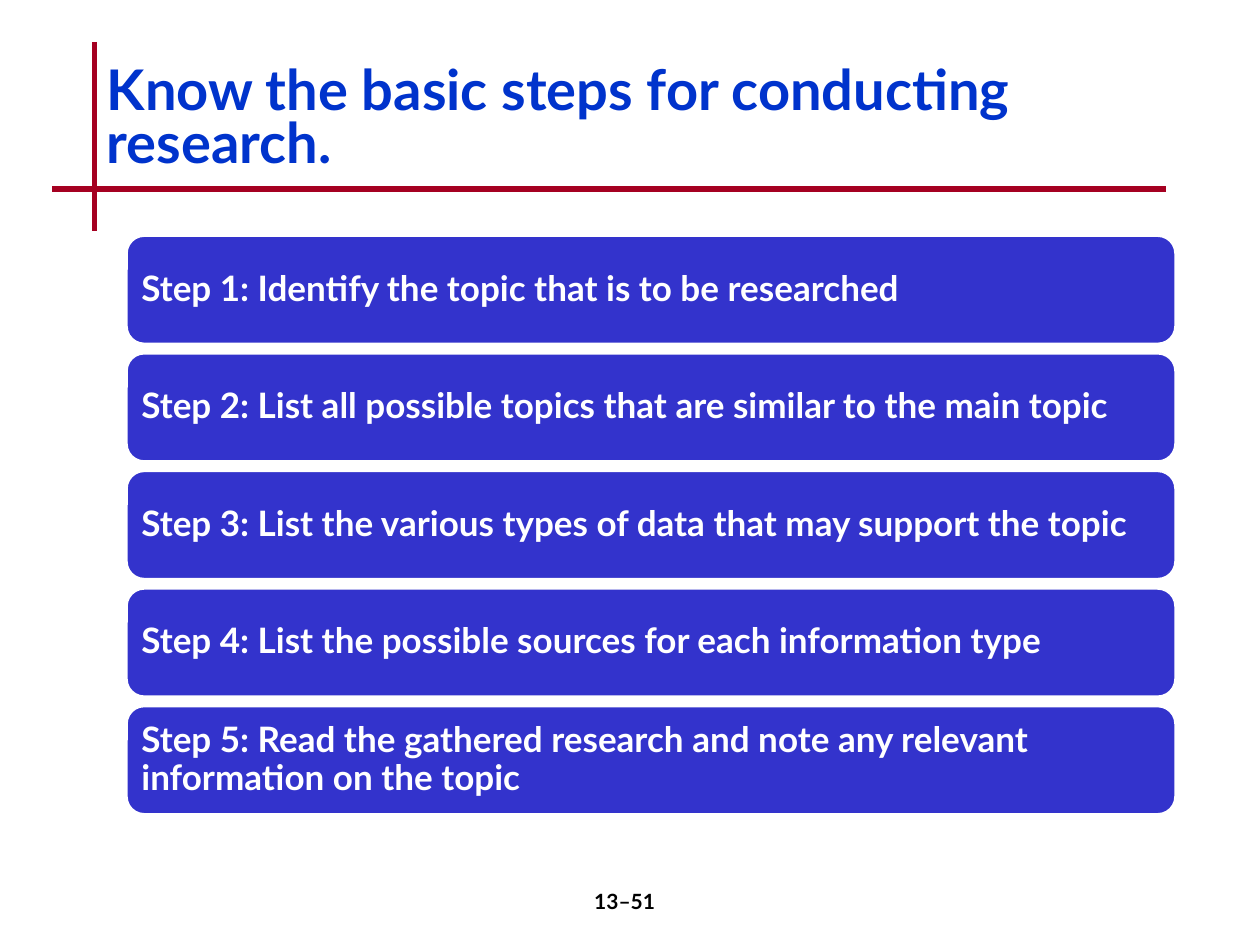
"""Build the slide on the basic steps for conducting research."""
from lxml import etree
from pptx import Presentation
from pptx.dml.color import RGBColor
from pptx.enum.shapes import MSO_CONNECTOR, MSO_SHAPE
from pptx.enum.text import MSO_ANCHOR, PP_ALIGN
from pptx.oxml.ns import qn
from pptx.util import Inches, Pt

LINE = MSO_CONNECTOR.STRAIGHT
ROUND = MSO_SHAPE.ROUNDED_RECTANGLE
MIDDLE, TOP = MSO_ANCHOR.MIDDLE, MSO_ANCHOR.TOP
LEFT, CENTER = PP_ALIGN.LEFT, PP_ALIGN.CENTER
RED = RGBColor(0xA5, 0x00, 0x21)
BLUE = RGBColor(0x00, 0x33, 0xCC)
INDIGO = RGBColor(0x33, 0x33, 0xCC)
WHITE = RGBColor(0xFF, 0xFF, 0xFF)
BLACK = RGBColor(0x00, 0x00, 0x00)
STEPS = [
    "Identify the topic that is to be researched",
    "List all possible topics that are similar to the main topic",
    "List the various types of data that may support the topic",
    "List the possible sources for each information type",
    "Read the gathered research and note any relevant information on the topic",
]

deck = Presentation()
deck.slide_width, deck.slide_height = Inches(10), Inches(7.5)
slide = deck.slides.add_slide(deck.slide_layouts[6])
shapes = slide.shapes
UNIT = deck.slide_width / 120


def grid(*cells):
    return [round(cell * UNIT) for cell in cells]


def write(shape, text, size, color, align=LEFT, anchor=MIDDLE, spacing=1.0):
    frame = shape.text_frame
    frame.word_wrap = True
    frame.vertical_anchor = anchor
    frame.text = text
    para = frame.paragraphs[0]
    para.alignment = align
    para.line_spacing = spacing
    font = para.font
    font.name, font.size, font.bold = "Lato", Pt(size), True
    font.color.rgb = color


for ends in [(9, 4, 9, 22), (5, 18, 111, 18)]:
    rule = shapes.add_connector(LINE, *grid(*ends))
    rule.line.color.rgb = RED
    rule.line.width = Pt(3)
    etree.SubElement(rule._element.spPr, qn("a:effectLst"))

for row, step in enumerate(STEPS):
    bar = shapes.add_shape(ROUND, *grid(12, 22.4 + 11.2 * row, 100, 10.4))
    bar.shadow.inherit = False
    bar.fill.solid()
    bar.fill.fore_color.rgb = INDIGO
    bar.line.color.rgb = WHITE
    bar.line.width = Pt(2)
    frame = bar.text_frame
    frame.margin_left = frame.margin_right = Inches(0.08)
    write(bar, f"Step {row + 1}: {step}", 20, WHITE, spacing=0.9)

title = shapes.add_textbox(*grid(9, 4, 102, 15))
write(title, "Know the basic steps for conducting research.", 32, BLUE, spacing=0.8)

page = shapes.add_textbox(*grid(47, 84, 25, 6))
write(page, "13–51", 12, BLACK, CENTER, TOP)

deck.save("out.pptx")
